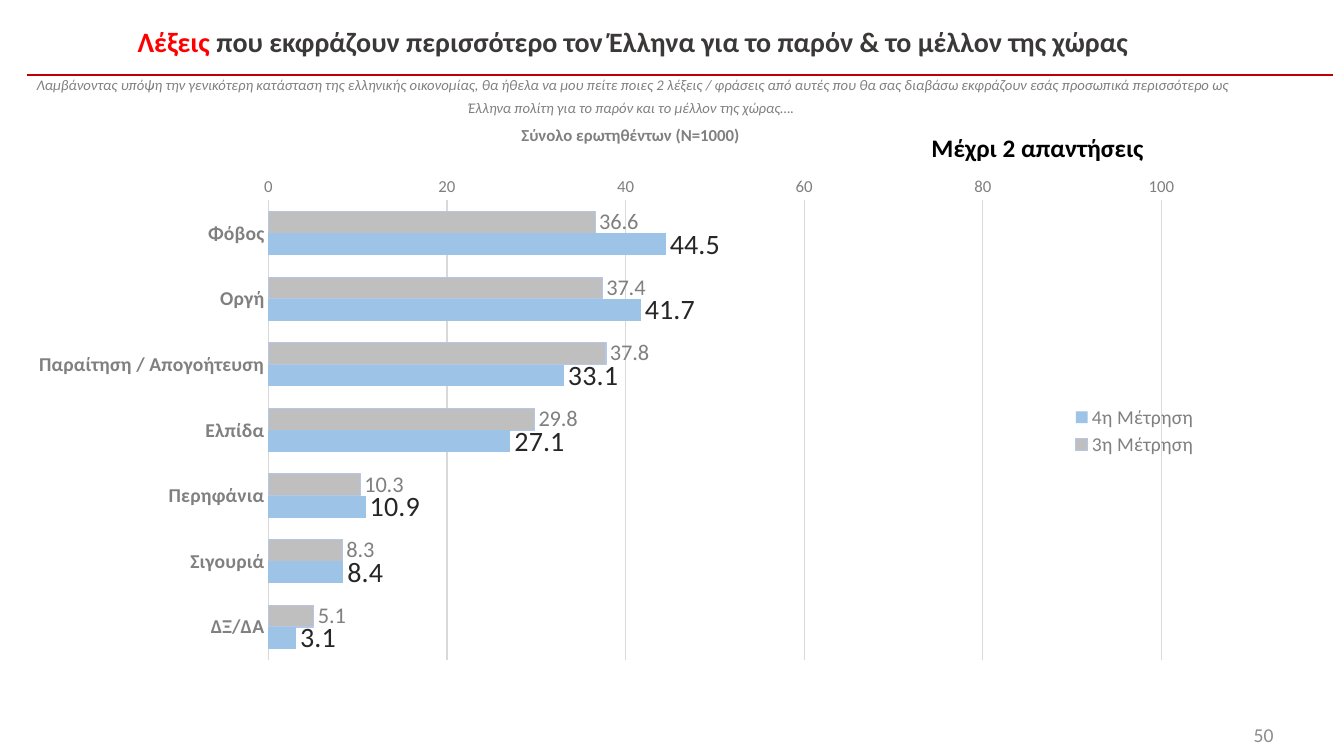
import pptx
import pptx.chart.data
import pptx.dml.color
import pptx.enum.chart
import pptx.enum.shapes
import pptx.enum.text
import pptx.oxml
import pptx.oxml.ns
import pptx.util
from pptx.util import Inches

RGBColor = pptx.dml.color.RGBColor
Pt = pptx.util.Pt
Align = pptx.enum.text.PP_ALIGN
Anchor = pptx.enum.text.MSO_ANCHOR

RED = RGBColor(0xFF, 0x00, 0x00)
DARK_RED = RGBColor(0xC0, 0x00, 0x00)
BLACK = RGBColor(0x00, 0x00, 0x00)
CHARCOAL = RGBColor(0x3B, 0x38, 0x38)
LABEL_DARK = RGBColor(0x26, 0x26, 0x26)
GRAY = RGBColor(0x80, 0x80, 0x80)
PAGE_GRAY = RGBColor(0x8C, 0x8C, 0x8C)
GRID_GRAY = RGBColor(0xD9, 0xD9, 0xD9)
BAR_GRAY = RGBColor(0xBF, 0xBF, 0xBF)
BAR_BLUE = RGBColor(0x9D, 0xC3, 0xE6)
BAR_EDGE = RGBColor(0xB4, 0xC7, 0xE7)


def style_font(font, size, color, bold=False, italic=False):
    font.name = "Calibri"
    font.size = Pt(size)
    font.color.rgb = color
    font.bold = bold
    font.italic = italic


def set_layout(element, target, x, y, w, h):
    """Place a chart part by fractions of the chart area."""
    inner = '<c:layoutTarget val="inner"/>' if target == "inner" else ""
    layout = pptx.oxml.parse_xml(
        f'<c:layout {pptx.oxml.ns.nsdecls("c")}><c:manualLayout>{inner}'
        '<c:xMode val="edge"/><c:yMode val="edge"/>'
        f'<c:x val="{x}"/><c:y val="{y}"/><c:w val="{w}"/><c:h val="{h}"/>'
        '</c:manualLayout></c:layout>')
    for old in element.findall(pptx.oxml.ns.qn("c:layout")):
        element.remove(old)
    element.insert(1 if target == "legend" else 0, layout)


deck = pptx.Presentation()
deck.slide_width, deck.slide_height = Inches(13.33), Inches(7.5)
page = deck.slides.add_slide(deck.slide_layouts[6])

# Rule under the title
rule = page.shapes.add_connector(pptx.enum.shapes.MSO_CONNECTOR.STRAIGHT,
                                 Inches(0.27), Inches(0.74), Inches(13.22), Inches(0.74))
rule.line.color.rgb = DARK_RED
rule.line.width = Pt(1.5)
rule._element.spPr.append(pptx.oxml.parse_xml(f'<a:effectLst {pptx.oxml.ns.nsdecls("a")}/>'))

# Title, question and sample size: line spacing, space before, spans
heading = [
    (1.3, 0, [("Λέξεις", 20, RED, True, False),
              (" που εκφράζουν περισσότερο τον Έλληνα για το παρόν & το μέλλον της χώρας",
               20, CHARCOAL, True, False)]),
    (1.3, 9.5, [("Λαμβάνοντας υπόψη την γενικότερη κατάσταση της ελληνικής οικονομίας, "
                 "θα ήθελα να μου πείτε ποιες 2 λέξεις / φράσεις από αυτές που θα σας "
                 "διαβάσω εκφράζουν εσάς προσωπικά περισσότερο ως Έλληνα πολίτη για το "
                 "παρόν και το μέλλον της χώρας…. ", 10.5, GRAY, False, True)]),
    (1.1, 0, [("Σύνολο ερωτηθέντων (Ν=1000)", 12, GRAY, True, False),
              (" ", 16, GRAY, True, False)]),
]
box = page.shapes.add_textbox(Inches(0.15), Inches(0.07), Inches(12.26), Inches(1.45))
frame = box.text_frame
frame.word_wrap = True
frame.vertical_anchor = Anchor.MIDDLE
for index, (spacing, before, spans) in enumerate(heading):
    para = frame.paragraphs[0] if index == 0 else frame.add_paragraph()
    para.alignment = Align.CENTER
    para.line_spacing = spacing
    if before:
        para.space_before = Pt(before)
    for words, *look in spans:
        span = para.add_run()
        span.text = words
        style_font(span.font, *look)

# Answer note and page number
notes = [
    ("Μέχρι 2 απαντήσεις", (9.14, 1.26, 2.39, 0.4), False, Anchor.TOP, Align.LEFT, (18, BLACK, True)),
    ("50", (9.95, 7.04, 2.78, 0.5), True, Anchor.MIDDLE, Align.RIGHT, (14, PAGE_GRAY)),
]
for words, place, wrap, anchor, align, look in notes:
    frame = page.shapes.add_textbox(*map(Inches, place)).text_frame
    frame.word_wrap = wrap
    frame.vertical_anchor = anchor
    frame.text = words
    frame.paragraphs[0].alignment = align
    style_font(frame.paragraphs[0].runs[0].font, *look)

# Bar chart of the two survey waves
data = pptx.chart.data.CategoryChartData(number_format="0.0")
data.categories = ["Φόβος", "Οργή", "Παραίτηση / Απογοήτευση", "Ελπίδα",
                   "Περηφάνια", "Σιγουριά", "ΔΞ/ΔΑ"]
data.add_series("3η Μέτρηση", [36.6, 37.4, 37.8, 29.8, 10.3, 8.3, 5.1])
data.add_series("4η Μέτρηση", [44.5, 41.7, 33.1, 27.1, 10.9, 8.4, 3.1])
chart = page.shapes.add_chart(pptx.enum.chart.XL_CHART_TYPE.BAR_CLUSTERED, Inches(0.34),
                              Inches(1.64), Inches(11.61), Inches(5.22), data).chart
chart.has_title = False
style_font(chart.font, 10, BLACK)
set_layout(chart._chartSpace.chart.plotArea, "inner", 0.2, 0.067, 0.763, 0.873)

plot = chart.plots[0]
plot.gap_width = 100
plot.overlap = 0
plot.vary_by_categories = False
bar_looks = [(BAR_GRAY, BAR_EDGE, 16, GRAY), (BAR_BLUE, None, 20, LABEL_DARK)]
for series, (fill, edge, size, color) in zip(plot.series, bar_looks):
    series.format.fill.solid()
    series.format.fill.fore_color.rgb = fill
    if edge:
        series.format.line.color.rgb = edge
        series.format.line.width = Pt(0.75)
    else:
        series.format.line.fill.background()
    labels = series.data_labels
    labels.show_value = True
    labels.number_format = "0.0"
    labels.number_format_is_linked = False
    labels.position = pptx.enum.chart.XL_LABEL_POSITION.OUTSIDE_END
    style_font(labels.font, size, color)

words_axis, value_axis = chart.category_axis, chart.value_axis
for axis in (words_axis, value_axis):
    axis.major_tick_mark = axis.minor_tick_mark = pptx.enum.chart.XL_TICK_MARK.NONE
words_axis.reverse_order = True
words_axis.format.line.color.rgb = GRID_GRAY
words_axis.format.line.width = Pt(0.75)
style_font(words_axis.tick_labels.font, 14, GRAY, bold=True)
value_axis.minimum_scale, value_axis.maximum_scale = 0, 100
value_axis.major_unit = 20
value_axis.format.line.fill.background()
value_axis.major_gridlines.format.line.color.rgb = GRID_GRAY
value_axis.major_gridlines.format.line.width = Pt(0.75)
value_axis.tick_labels.number_format = "0"
value_axis.tick_labels.number_format_is_linked = False
style_font(value_axis.tick_labels.font, 12, GRAY)

chart.has_legend = True
chart.legend.position = pptx.enum.chart.XL_LEGEND_POSITION.RIGHT
chart.legend.include_in_layout = False
style_font(chart.legend.font, 14, GRAY)
set_layout(chart.legend._element, "legend", 0.88, 0.45, 0.12, 0.11)

deck.save("out.pptx")
